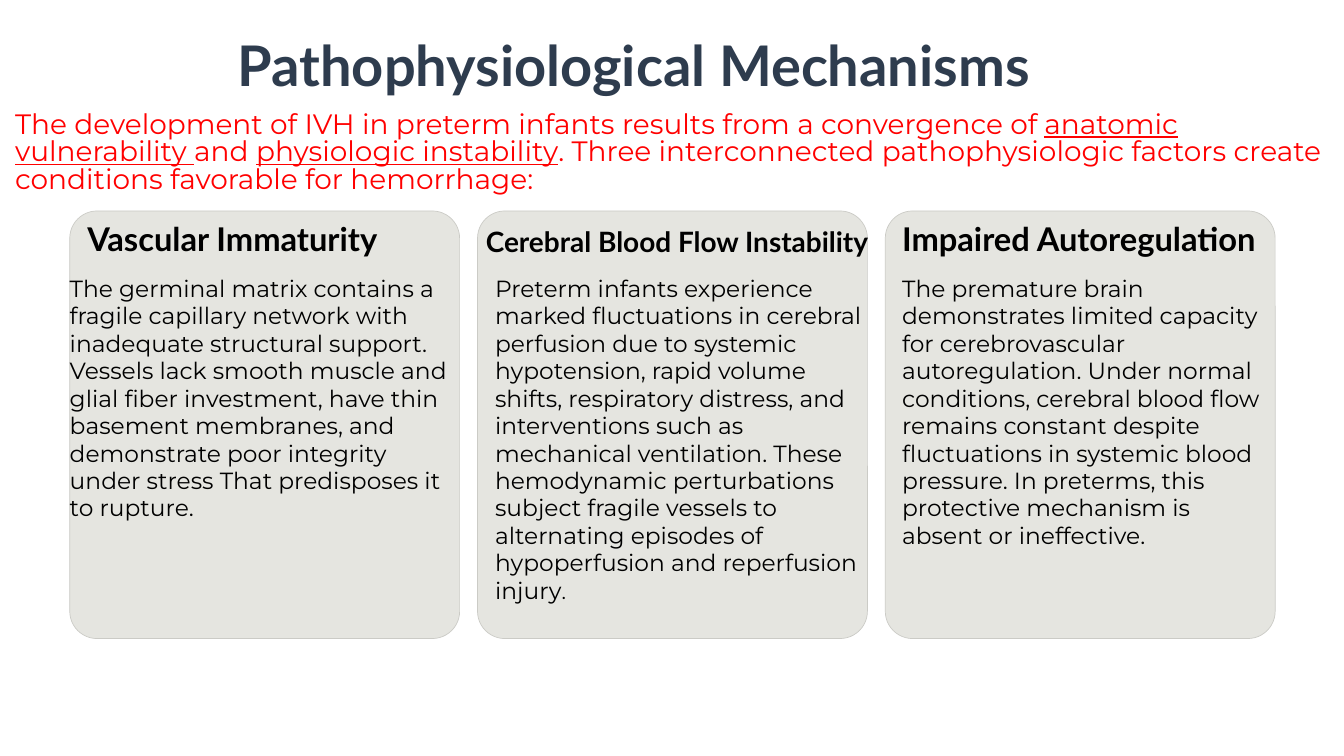
import pptx
import pptx.util
import pptx.dml.color
import pptx.enum.shapes
from pptx.util import Cm

NAVY = pptx.dml.color.RGBColor(0x2E, 0x3C, 0x4E)
RED = pptx.dml.color.RGBColor(0xFF, 0x00, 0x00)
BLACK = pptx.dml.color.RGBColor(0x00, 0x00, 0x00)
CARD_FILL = pptx.dml.color.RGBColor(0xE5, 0xE5, 0xE0)
CARD_LINE = pptx.dml.color.RGBColor(0xCB, 0xCB, 0xC6)

CARD_LEFT, CARD_TOP = 2.11, 6.38
CARD_WIDTH, CARD_HEIGHT = 11.79, 12.93
CARD_PITCH = 12.33
HEADING_TOP, BODY_TOP = 6.93, 8.31

INTRO = [
    ("The development of IVH in preterm infants results from a convergence of ", {}),
    ("anatomic vulnerability ", {"underline": True}),
    ("and ", {}),
    ("physiologic instability", {"underline": True}),
    (". Three interconnected pathophysiologic factors create conditions "
     "favorable for hemorrhage:", {}),
]

MECHANISMS = [
    {
        "heading": "Vascular Immaturity", "heading_size": 28,
        "heading_inset": 0.53, "heading_area": (9.5, 1.73),
        "body": [
            ("The germinal matrix contains a fragile capillary network with "
             "inadequate structural support. Vessels lack smooth muscle and glial "
             "fiber investment, have thin basement membranes, and demonstrate poor "
             "integrity under stress That predisposes it to rupture.", {}),
        ],
        "body_inset": 0, "body_area": (11.76, 10.46),
    },
    {
        "heading": "Cerebral Blood Flow Instability", "heading_size": 24,
        "heading_inset": 0.25, "heading_area": (11.8, 1.37),
        "body": [
            ("Preterm infants experience marked fluctuations in cerebral perfusion "
             "due to systemic hypotension, rapid volume shifts, respiratory "
             "distress, and interventions such as mechanical ventilation. These "
             "hemodynamic perturbations subject fragile vessels to alternating "
             "episodes of hypoperfusion and reperfusion injury", {}),
            (".", {"size": 18}),
        ],
        "body_inset": 0.53, "body_area": (11.23, 10.69),
    },
    {
        "heading": "Impaired Autoregulation", "heading_size": 28,
        "heading_inset": 0.51, "heading_area": (11, 1.37),
        "body": [
            ("The premature brain demonstrates limited capacity for cerebrovascular "
             "autoregulation. Under normal conditions, cerebral blood flow remains "
             "constant despite fluctuations in systemic blood pressure. In preterms, "
             "this protective mechanism is absent or ineffective.", {}),
        ],
        "body_inset": 0.51, "body_area": (11.25, 11),
    },
]


def add_span(para, text, size=20, font="Montserrat", color=BLACK, bold=False,
             underline=False):
    span = para.add_run()
    span.text = text
    span.font.size = pptx.util.Pt(size)
    span.font.name = font
    span.font.color.rgb = color
    span.font.bold = bold
    span.font.underline = underline


def add_text(page, spans, left, top, width, height, spacing=23.5, wrap=True,
             indent=0, **style):
    box = page.shapes.add_textbox(Cm(left), Cm(top), Cm(width), Cm(height))
    frame = box.text_frame
    frame.word_wrap = wrap
    frame.margin_left = Cm(indent)
    frame.margin_top = frame.margin_right = frame.margin_bottom = 0
    para = frame.paragraphs[0]
    para.line_spacing = pptx.util.Pt(spacing)
    for text, changes in spans:
        add_span(para, text, **{**style, **changes})


def add_card(page, left):
    card = page.shapes.add_shape(
        pptx.enum.shapes.MSO_SHAPE.ROUNDED_RECTANGLE,
        Cm(left), Cm(CARD_TOP), Cm(CARD_WIDTH), Cm(CARD_HEIGHT))
    card.adjustments[0] = 0.07
    card.shadow.inherit = False
    card.fill.solid()
    card.fill.fore_color.rgb = CARD_FILL
    card.line.color.rgb = CARD_LINE
    card.line.width = pptx.util.Pt(0.6)


def add_mechanism(page, left, mechanism):
    add_card(page, left)
    add_text(page, [(mechanism["heading"], {})],
             left + mechanism["heading_inset"], HEADING_TOP,
             *mechanism["heading_area"], spacing=24.5, wrap=False,
             size=mechanism["heading_size"], font="Lato", bold=True)
    add_text(page, mechanism["body"], left + mechanism["body_inset"], BODY_TOP,
             *mechanism["body_area"])


def main():
    deck = pptx.Presentation()
    deck.slide_width, deck.slide_height = Cm(40.64), Cm(22.86)
    page = deck.slides.add_slide(deck.slide_layouts[6])
    add_text(page, [("Pathophysiological Mechanisms", {})],
             CARD_LEFT, 1.22, 35.46, 2.18, spacing=49, wrap=False, indent=5.08,
             size=48, font="Lato", color=NAVY, bold=True)
    add_text(page, INTRO, 0.46, 3.4, 40.18, 2.67, size=24, color=RED)
    for index, mechanism in enumerate(MECHANISMS):
        add_mechanism(page, CARD_LEFT + index * CARD_PITCH, mechanism)
    deck.save("out.pptx")


if __name__ == "__main__":
    main()
